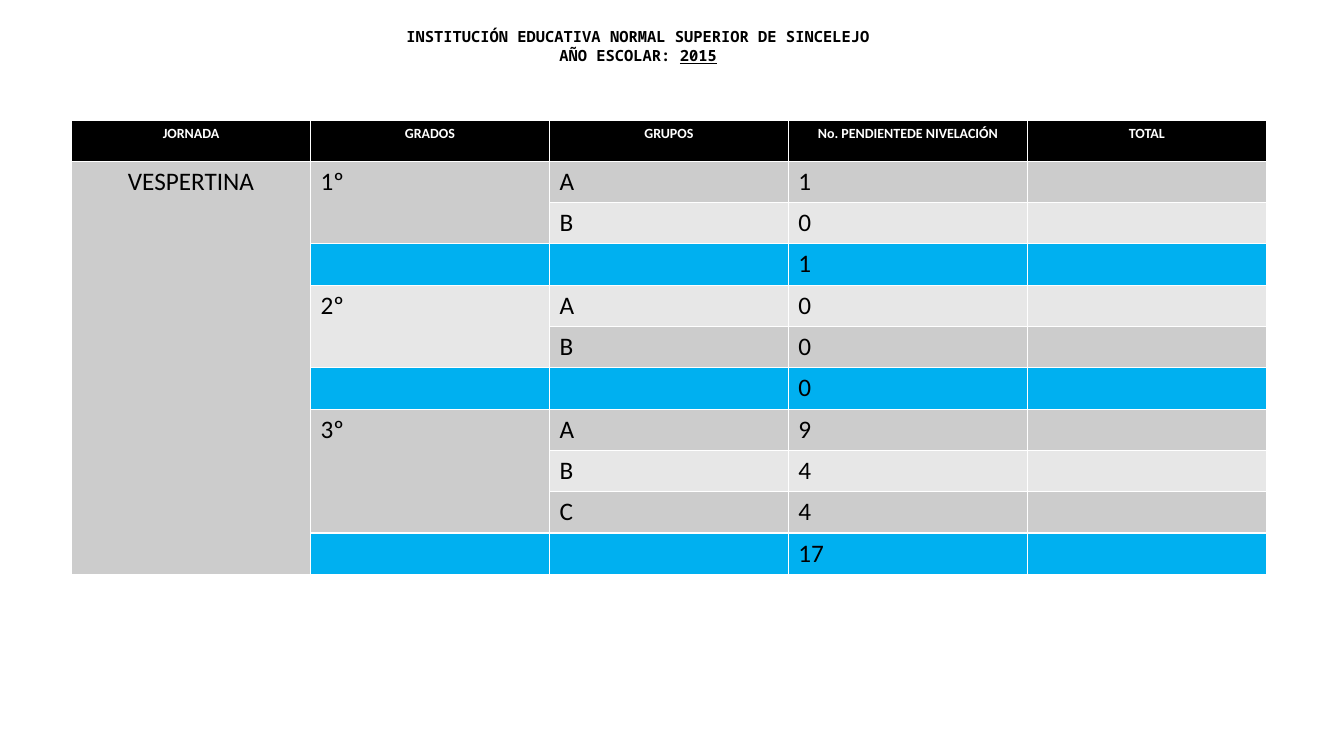
from pptx import Presentation
from pptx.dml.color import RGBColor
from pptx.enum.text import MSO_ANCHOR, PP_ALIGN
from pptx.util import Inches, Pt

HEADING = [
    [("INSTITUCIÓN EDUCATIVA NORMAL SUPERIOR DE SINCELEJO", False)],
    [("AÑO ESCOLAR: ", False), ("2015", True)],
]
COLUMNS = ["JORNADA", "GRADOS", "GRUPOS", "No. PENDIENTEDE NIVELACIÓN", "TOTAL"]
SHIFT = "VESPERTINA"
GRADES = [
    ("1º", [("A", 1), ("B", 0)]),
    ("2º", [("A", 0), ("B", 0)]),
    ("3º", [("A", 9), ("B", 4), ("C", 4)]),
]
BLACK, WHITE, SUBTOTAL = "000000", "FFFFFF", "00B0F0"
BANDS = ["E7E7E7", "CCCCCC"]
COLUMN_WIDTH, ROW_HEIGHT = 2.37, 0.41


def rgb(code):
    return RGBColor.from_string(code)


def add_run(paragraph, words, size, font, color, bold=False, underline=False):
    run = paragraph.add_run()
    run.text = words
    run.font.size = Pt(size)
    run.font.name = font
    run.font.bold = bold
    run.font.underline = underline
    run.font.color.rgb = rgb(color)


def fill_cell(cell, words, fill, size=18, color=BLACK, bold=False, align=PP_ALIGN.LEFT):
    cell.fill.solid()
    cell.fill.fore_color.rgb = rgb(fill)
    paragraph = cell.text_frame.paragraphs[0]
    paragraph.alignment = align
    if words:
        add_run(paragraph, words, size, "Calibri", color, bold)


def add_heading(slide):
    frame = slide.shapes.add_textbox(Inches(2.08), Inches(0.22), Inches(8.5), Inches(0.47)).text_frame
    frame.word_wrap = True
    frame.vertical_anchor = MSO_ANCHOR.MIDDLE
    for index, line in enumerate(HEADING):
        paragraph = frame.add_paragraph() if index else frame.paragraphs[0]
        paragraph.alignment = PP_ALIGN.CENTER
        for words, underline in line:
            add_run(paragraph, words, 11, "Noto Sans Mono", BLACK, True, underline)


def add_pending_table(slide):
    row_count = 1 + sum(len(groups) + 1 for _, groups in GRADES)
    table = slide.shapes.add_table(
        row_count, len(COLUMNS), Inches(0.71), Inches(1.19),
        Inches(COLUMN_WIDTH * len(COLUMNS)), Inches(ROW_HEIGHT * row_count),
    ).table
    for column in table.columns:
        column.width = Inches(COLUMN_WIDTH)
    for row in table.rows:
        row.height = Inches(ROW_HEIGHT)

    for index, title in enumerate(COLUMNS):
        fill_cell(table.cell(0, index), title, BLACK, 10, WHITE, True, PP_ALIGN.CENTER)
    fill_cell(table.cell(1, 0), SHIFT, BANDS[1], align=PP_ALIGN.CENTER)
    table.cell(1, 0).merge(table.cell(row_count - 1, 0))

    top = 1
    for grade, groups in GRADES:
        subtotal_row = top + len(groups)
        fill_cell(table.cell(top, 1), grade, BANDS[top % 2])
        table.cell(top, 1).merge(table.cell(subtotal_row - 1, 1))
        for row, (group, pending) in enumerate(groups, top):
            for column, words in enumerate([group, str(pending), ""], 2):
                fill_cell(table.cell(row, column), words, BANDS[row % 2])
        subtotal = str(sum(pending for _, pending in groups))
        for column, words in enumerate(["", "", subtotal, ""], 1):
            fill_cell(table.cell(subtotal_row, column), words, SUBTOTAL)
        top = subtotal_row + 1


def main():
    deck = Presentation()
    deck.slide_width, deck.slide_height = Inches(13.33), Inches(7.5)
    slide = deck.slides.add_slide(deck.slide_layouts[6])
    add_heading(slide)
    add_pending_table(slide)
    deck.save("out.pptx")


if __name__ == "__main__":
    main()
